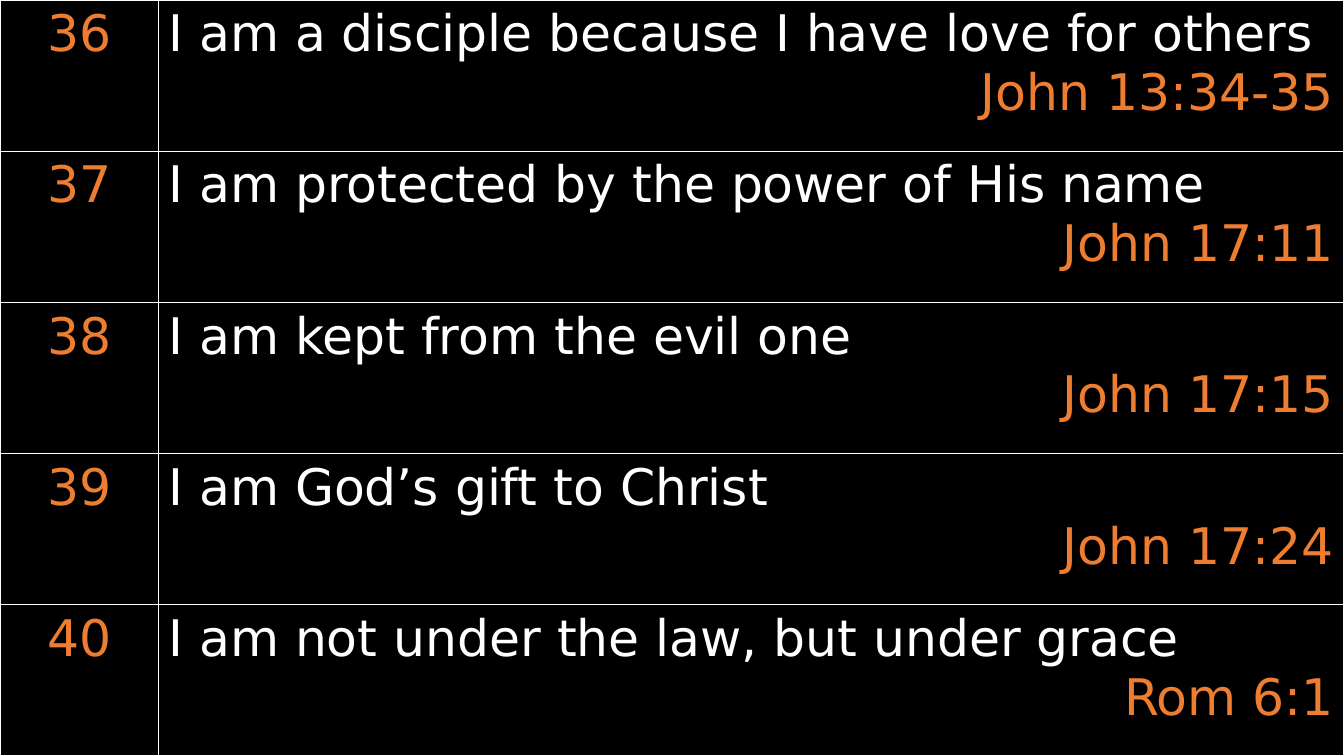
import pptx
import pptx.dml.color
import pptx.enum.text
import pptx.oxml
import pptx.oxml.ns
import pptx.util

BLACK, WHITE, ORANGE = "000000", "FFFFFF", "ED7D31"
ALIGN = pptx.enum.text.PP_ALIGN

FIRST_NUMBER = 36
STATEMENTS = [
    ("I am a disciple because I have love for others", "John 13:34-35"),
    ("I am protected by the power of His name", "John 17:11"),
    ("I am kept from the evil one", "John 17:15"),
    ("I am God’s gift to Christ", "John 17:24"),
    ("I am not under the law, but under grace", "Rom 6:1"),
]


def rgb(color):
    return pptx.dml.color.RGBColor.from_string(color)


def write(para, text, color=WHITE, align=ALIGN.LEFT, size=36, font="DejaVu Sans"):
    para.alignment = align
    span = para.add_run()
    span.text = text
    span.font.size = pptx.util.Pt(size)
    span.font.name = font
    span.font.color.rgb = rgb(color)


deck = pptx.Presentation()
deck.slide_width = pptx.util.Inches(13.33)
deck.slide_height = pptx.util.Inches(7.5)
page = deck.slides.add_slide(deck.slide_layouts[6])
page.background.fill.solid()
page.background.fill.fore_color.rgb = rgb(BLACK)

table = page.shapes.add_table(
    len(STATEMENTS), 2, 0, 0, deck.slide_width, deck.slide_height
).table
table.first_row = table.horz_banding = False
number_width = pptx.util.Inches(1.57)
table.columns[0].width = number_width
table.columns[1].width = deck.slide_width - number_width

for index, (statement, verse) in enumerate(STATEMENTS):
    number_cell, statement_cell = table.rows[index].cells
    write(number_cell.text_frame.paragraphs[0], str(FIRST_NUMBER + index),
          color=ORANGE, align=ALIGN.CENTER)
    write(statement_cell.text_frame.paragraphs[0], statement)
    write(statement_cell.text_frame.add_paragraph(), verse,
          color=ORANGE, align=ALIGN.RIGHT)

# Borders must precede the fill inside a cell's properties.
for cell in table.iter_cells():
    properties = cell._tc.get_or_add_tcPr()
    for side in ("lnL", "lnR", "lnT", "lnB"):
        properties.append(pptx.oxml.parse_xml(
            f'<a:{side} {pptx.oxml.ns.nsdecls("a")} w="{pptx.util.Pt(1)}">'
            f'<a:solidFill><a:srgbClr val="{WHITE}"/></a:solidFill></a:{side}>'
        ))
    cell.fill.solid()
    cell.fill.fore_color.rgb = rgb(BLACK)

deck.save("out.pptx")
